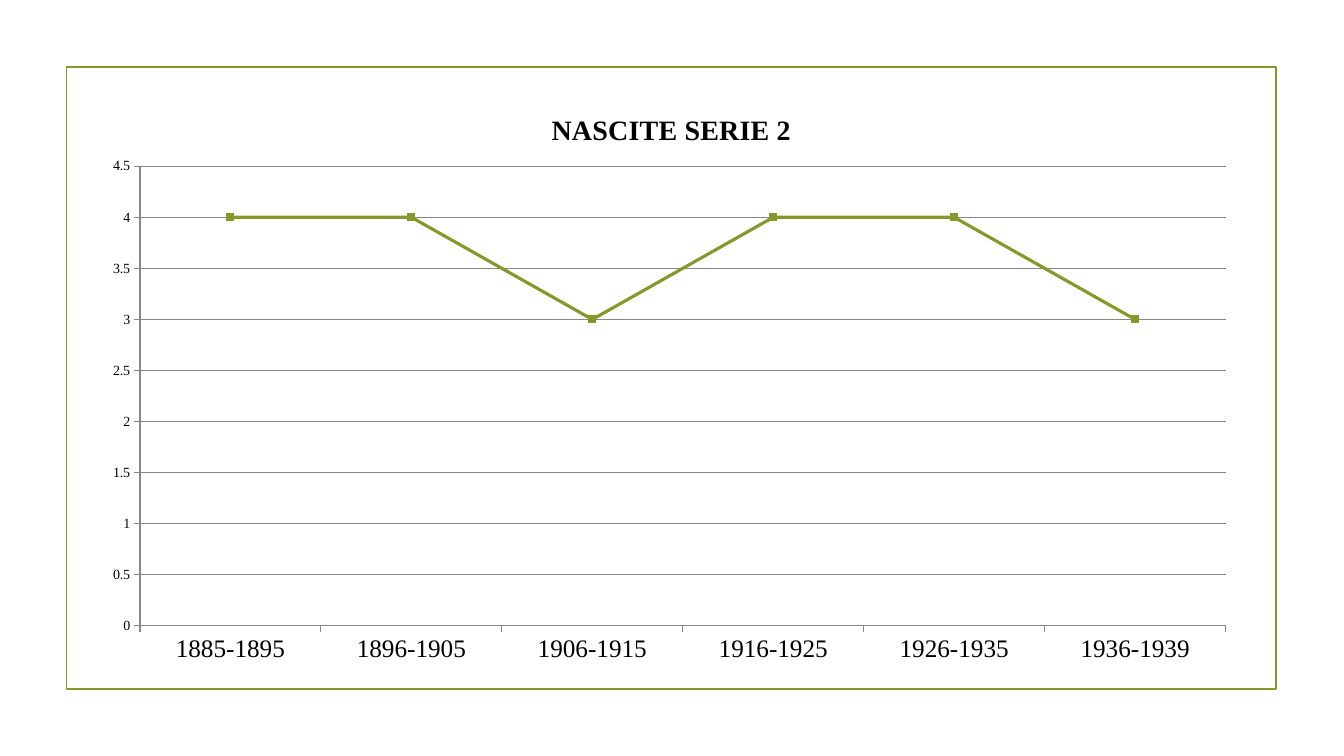
from lxml import etree
from pptx import Presentation
from pptx.chart.data import CategoryChartData
from pptx.dml.color import RGBColor
from pptx.enum.chart import XL_CHART_TYPE, XL_MARKER_STYLE, XL_TICK_MARK
from pptx.enum.shapes import MSO_SHAPE
from pptx.oxml.ns import qn
from pptx.util import Pt

LINE_MARKERS = XL_CHART_TYPE.LINE_MARKERS
SQUARE = XL_MARKER_STYLE.SQUARE
OUTSIDE, NO_TICK = XL_TICK_MARK.OUTSIDE, XL_TICK_MARK.NONE
RECTANGLE = MSO_SHAPE.RECTANGLE

COLORS = {"olive": "83992A", "black": "000000", "grid": "878787"}
FONT = "Times New Roman"
BIRTHS = {
    "1885-1895": 4, "1896-1905": 4, "1906-1915": 3,
    "1916-1925": 4, "1926-1935": 4, "1936-1939": 3,
}


def color(name):
    return RGBColor.from_string(COLORS[name])


def style_font(font, **values):
    for name, value in {"name": FONT, **values}.items():
        setattr(font, name, value)
    font.color.rgb = color("black")


def style_line(line, name, width):
    line.color.rgb = color(name)
    line.width = Pt(width)


def place_plot(chart, **fractions):
    """Fix the inner plot area as fractions of the chart's size."""
    plot_area = chart.plots[0]._element.getparent()
    layout = plot_area.find(qn("c:layout"))
    if layout is None:
        layout = etree.Element(qn("c:layout"))
        plot_area.insert(0, layout)
    manual = etree.SubElement(layout, qn("c:manualLayout"))
    settings = {"layoutTarget": "inner", "xMode": "edge", "yMode": "edge", **fractions}
    for name, value in settings.items():
        etree.SubElement(manual, qn(f"c:{name}")).set("val", str(value))


def add_frame(page, left, top, width, height):
    frame = page.shapes.add_shape(RECTANGLE, Pt(left), Pt(top), Pt(width), Pt(height))
    frame.shadow.inherit = False
    frame.fill.background()
    style_line(frame.line, "olive", 1.25)


def add_births_chart(page, left, top, width, height):
    data = CategoryChartData()
    data.categories = list(BIRTHS)
    data.add_series("Series 1", list(BIRTHS.values()))
    chart = page.shapes.add_chart(
        LINE_MARKERS, Pt(left), Pt(top), Pt(width), Pt(height), data
    ).chart
    chart.has_legend = False
    style_font(chart.font, size=Pt(10))

    chart.has_title = True
    title = chart.chart_title
    title.include_in_layout = False
    title.text_frame.text = "NASCITE SERIE 2"
    span = title.text_frame.paragraphs[0].runs[0]
    style_font(span.font, size=Pt(20), bold=True)

    for axis, size in ((chart.category_axis, 18), (chart.value_axis, 10)):
        axis.major_tick_mark = OUTSIDE
        axis.minor_tick_mark = NO_TICK
        style_line(axis.format.line, "grid", 0.75)
        style_font(axis.tick_labels.font, size=Pt(size))
    scale = {"minimum_scale": 0, "maximum_scale": 4.5, "major_unit": 0.5,
             "has_major_gridlines": True}
    for name, value in scale.items():
        setattr(chart.value_axis, name, value)
    style_line(chart.value_axis.major_gridlines.format.line, "grid", 0.75)

    plot = chart.plots[0]
    plot.vary_by_categories = False
    series = plot.series[0]
    series.smooth = False
    style_line(series.format.line, "olive", 2.25)
    marker = series.marker
    marker.style = SQUARE
    marker.size = 5
    marker.format.fill.solid()
    marker.format.fill.fore_color.rgb = color("olive")
    style_line(marker.format.line, "olive", 0.75)
    place_plot(chart, x=0.04, y=0.13, w=0.94, h=0.78)


def build_births_page(page, left, top, width, height):
    add_frame(page, left, top, width, height)
    add_births_chart(page, left + 19.5, top + 16, width - 39, height - 23)


def main():
    deck = Presentation()
    deck.slide_width, deck.slide_height = Pt(960), Pt(540)
    page = deck.slides.add_slide(deck.slide_layouts[6])
    build_births_page(page, 47.5, 48, 864, 444)
    deck.save("out.pptx")


if __name__ == "__main__":
    main()
